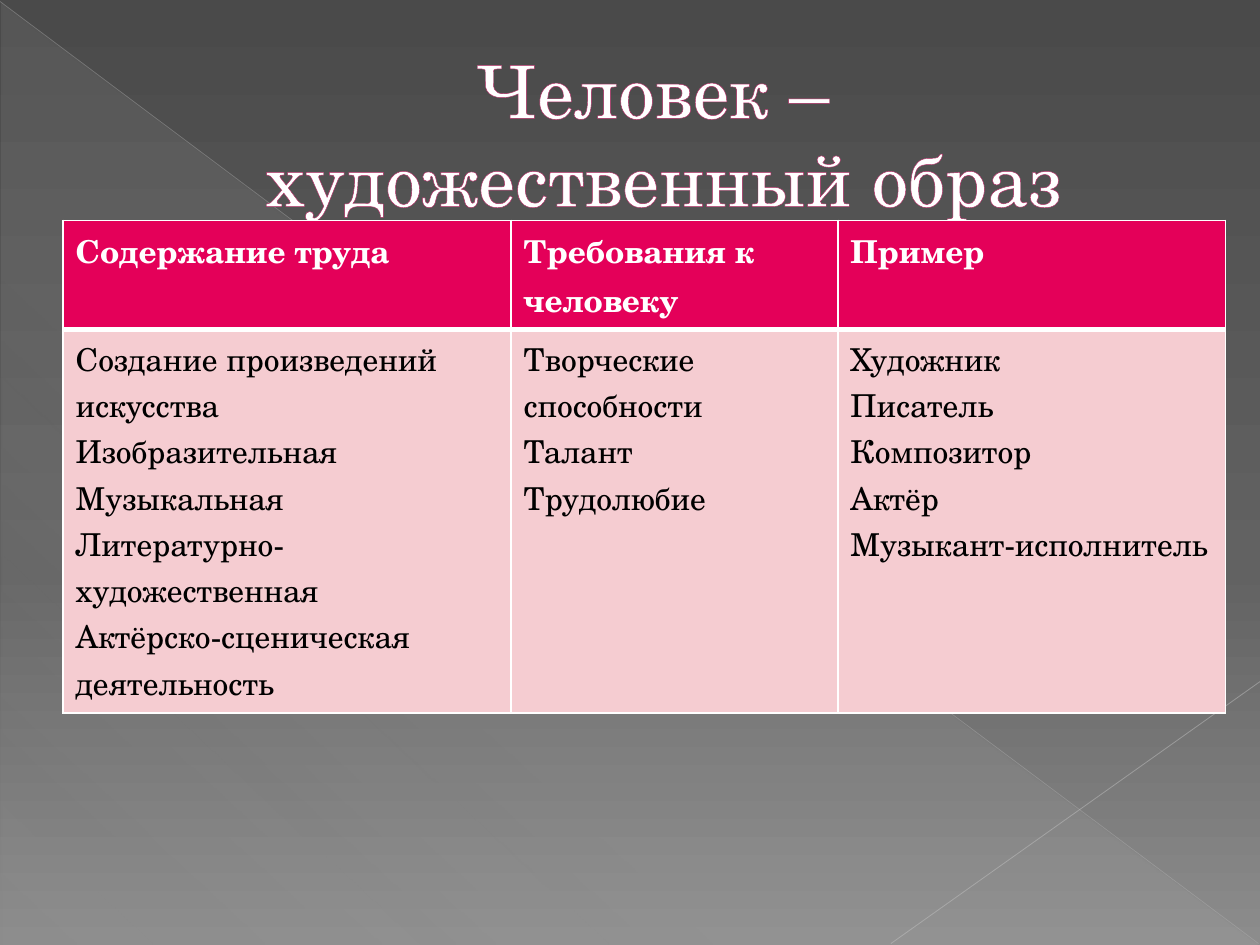
from dataclasses import dataclass

from lxml.etree import SubElement
from pptx import Presentation
from pptx.dml.color import RGBColor
from pptx.enum.shapes import MSO_CONNECTOR, MSO_SHAPE
from pptx.enum.text import MSO_ANCHOR, PP_ALIGN
from pptx.oxml.ns import qn
from pptx.util import Cm, Pt

FONT = "TeX Gyre Schola"


@dataclass(frozen=True)
class Stop:
    position: int
    color: str
    opacity: int = 100


@dataclass(frozen=True)
class Ray:
    start: tuple[float, float]
    end: tuple[float, float]
    color: str
    width: float
    opacity: int


@dataclass(frozen=True)
class Column:
    width: float
    heading: str
    entries: tuple[str, ...]


BACKDROP = (Stop(0, "4A4A4A"), Stop(60, "626262"), Stop(100, "8C8C8C"))
SHEEN = (Stop(0, "D2D2D2", 10), Stop(70, "D2D2D2", 8), Stop(100, "D2D2D2", 1))
RAYS = (
    Ray((0, 0.03), (25.37, 19.02), "BFBFBF", 0.39, 35),
    Ray((25.4, 13.74), (17.96, 19.02), "C6C6C6", 0.47, 45),
)
COLUMNS = (
    Column(9.03, "Содержание труда", (
        "Создание произведений искусства", "Изобразительная", "Музыкальная",
        "Литературно-художественная", "Актёрско-сценическая", "деятельность")),
    Column(6.59, "Требования к человеку", (
        "Творческие способности", "Талант", "Трудолюбие")),
    Column(7.81, "Пример", (
        "Художник", "Писатель", "Композитор", "Актёр", "Музыкант-исполнитель")),
)


def rgb(color: str) -> RGBColor:
    return RGBColor.from_string(color)


def add_color(parent, color: str, opacity: int = 100) -> None:
    tint = SubElement(parent, qn("a:srgbClr"), val=color)
    if opacity < 100:
        SubElement(tint, qn("a:alpha"), val=str(opacity * 1000))


def set_gradient(fill, owner, stops: tuple[Stop, ...], angle: int) -> None:
    fill.gradient()
    gradient = owner.find(".//" + qn("a:gradFill"))
    for child in list(gradient):
        gradient.remove(child)
    stop_list = SubElement(gradient, qn("a:gsLst"))
    for stop in stops:
        mark = SubElement(stop_list, qn("a:gs"), pos=str(stop.position * 1000))
        add_color(mark, stop.color, stop.opacity)
    SubElement(gradient, qn("a:lin"), ang=str(angle * 60000), scaled="0")


def draw_ray(slide, ray: Ray) -> None:
    line = slide.shapes.add_connector(
        MSO_CONNECTOR.STRAIGHT, *map(Cm, ray.start + ray.end))
    line.line.width = Pt(ray.width)
    line.line.color.rgb = rgb(ray.color)
    tint = line.element.spPr.find(".//" + qn("a:srgbClr"))
    SubElement(tint, qn("a:alpha"), val=str(ray.opacity * 1000))
    SubElement(line.element.spPr, qn("a:effectLst"))


def add_run(paragraph, text: str, size: float, color: str, bold: bool = False):
    run = paragraph.add_run()
    run.text = text
    run.font.name = FONT
    run.font.size = Pt(size)
    run.font.bold = bold
    run.font.color.rgb = rgb(color)
    return run


def draw_title(slide, lines: tuple[str, ...]) -> None:
    title = slide.shapes.add_textbox(Cm(1.27), Cm(0.74), Cm(22.86), Cm(3.89))
    frame = title.text_frame
    frame.word_wrap = True
    frame.vertical_anchor = MSO_ANCHOR.MIDDLE
    paragraph = frame.paragraphs[0]
    paragraph.alignment = PP_ALIGN.CENTER
    paragraph._p.get_or_add_pPr().set("marL", str(Cm(1.35)))
    for index, text in enumerate(lines):
        if index:
            paragraph.add_line_break()
        properties = add_run(paragraph, text, 42, "FFFFFF").font._element
        outline = SubElement(properties, qn("a:ln"), w=str(Pt(0.5)))
        add_color(SubElement(outline, qn("a:solidFill")), "B12761")
        properties.insert(0, outline)


def set_borders(cell, bottom: float) -> None:
    properties = cell._tc.get_or_add_tcPr()
    widths = {"a:lnL": 1, "a:lnR": 1, "a:lnT": 1, "a:lnB": bottom}
    for index, (side, width) in enumerate(widths.items()):
        border = SubElement(properties, qn(side), w=str(Pt(width)))
        add_color(SubElement(border, qn("a:solidFill")), "FFFFFF")
        properties.insert(index, border)


def fill_cell(cell, entries: tuple[str, ...], header: bool) -> None:
    cell.fill.solid()
    cell.fill.fore_color.rgb = rgb("E40059" if header else "F5CCD1")
    set_borders(cell, 3 if header else 1)
    frame = cell.text_frame
    for index, entry in enumerate(entries):
        paragraph = frame.add_paragraph() if index else frame.paragraphs[0]
        add_run(paragraph, entry, 18, "FFFFFF" if header else "000000", header)


def draw_table(slide, columns: tuple[Column, ...]) -> None:
    heights = (2.2, 7.73)
    table = slide.shapes.add_table(
        len(heights), len(columns), Cm(1.27), Cm(4.44),
        Cm(sum(column.width for column in columns)), Cm(sum(heights))).table
    for row, height in zip(table.rows, heights):
        row.height = Cm(height)
    for index, column in enumerate(columns):
        table.columns[index].width = Cm(column.width)
        fill_cell(table.cell(0, index), (column.heading,), True)
        fill_cell(table.cell(1, index), column.entries, False)


def main() -> None:
    presentation = Presentation()
    presentation.slide_width = Cm(25.4)
    presentation.slide_height = Cm(19.05)
    slide = presentation.slides.add_slide(presentation.slide_layouts[6])
    set_gradient(slide.background.fill, slide.element, BACKDROP, 90)
    triangle = slide.shapes.add_shape(
        MSO_SHAPE.RIGHT_TRIANGLE, Cm(0.03), Cm(0.05), Cm(25.35), Cm(19))
    triangle.shadow.inherit = False
    triangle.line.fill.background()
    set_gradient(triangle.fill, triangle.element, SHEEN, 133)
    for ray in RAYS:
        draw_ray(slide, ray)
    draw_title(slide, ("Человек – ", "художественный образ"))
    draw_table(slide, COLUMNS)
    presentation.save("out.pptx")


if __name__ == "__main__":
    main()
